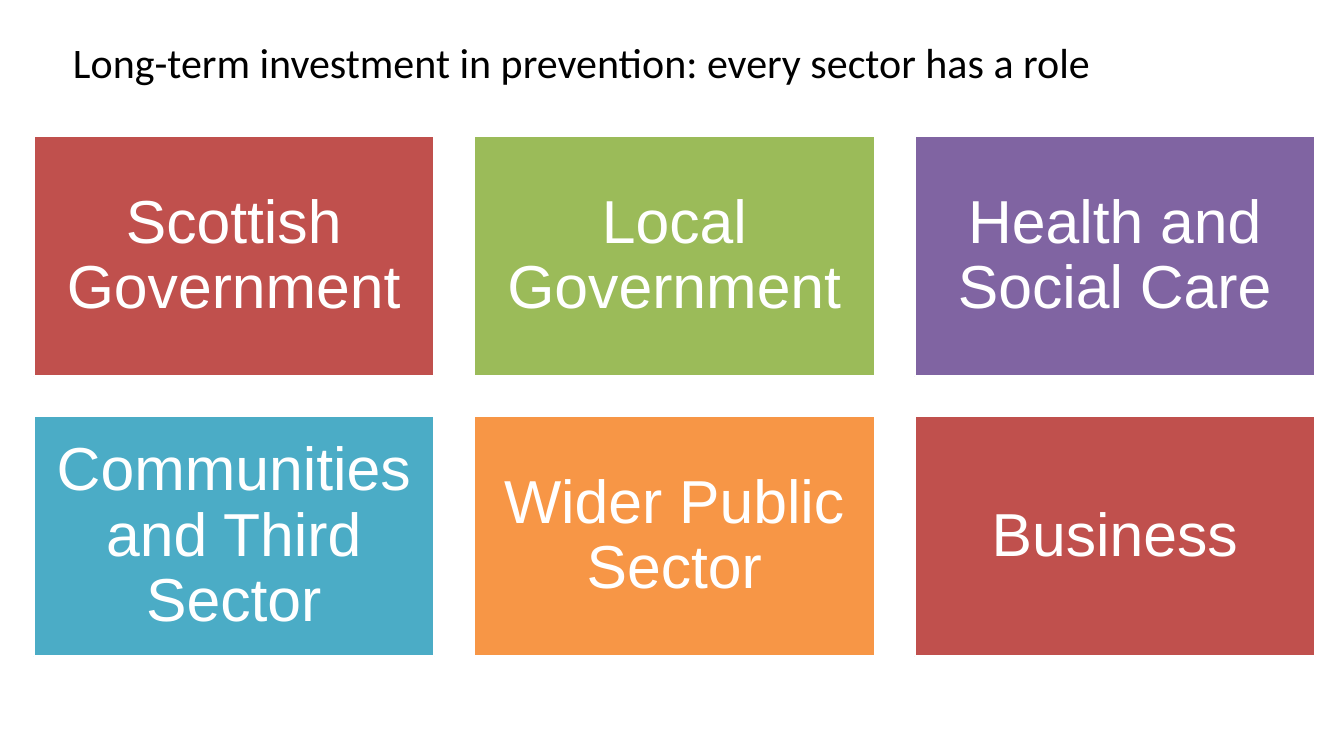
from pptx import Presentation
from pptx.dml.color import RGBColor
from pptx.enum.shapes import MSO_SHAPE
from pptx.enum.text import MSO_ANCHOR, PP_ALIGN
from pptx.util import Cm, Pt

RECTANGLE = MSO_SHAPE.RECTANGLE
MIDDLE = MSO_ANCHOR.MIDDLE
CENTER = PP_ALIGN.CENTER

TITLE = " Long-term investment in prevention: every sector has a role"
SECTORS = [
    ("Scottish Government", "C0504D"),
    ("Local Government", "9BBB59"),
    ("Health and Social Care", "8064A2"),
    ("Communities and Third Sector", "4BACC6"),
    ("Wider Public Sector", "F79646"),
    ("Business", "C0504D"),
]
COLUMNS = 3
LEFT, TOP = 1.27, 5.16
CARD_W, CARD_H = 15.14, 9.07
GAP = 1.51
INSET = 0.69


def rgb(value):
    return RGBColor.from_string(value)


def add_run(p, text, size, font, color):
    r = p.add_run()
    r.text = text
    r.font.size = Pt(size)
    r.font.name = font
    r.font.color.rgb = rgb(color)


def set_title(s, text):
    sp = s.shapes.title
    sp.left, sp.top, sp.width, sp.height = Cm(1.27), Cm(0.76), Cm(41.07), Cm(3.18)
    tf = sp.text_frame
    tf.vertical_anchor = MIDDLE
    p = tf.paragraphs[0]
    p.alignment = CENTER
    add_run(p, text, 45, "Calibri", "000000")


def add_card(s, left, top, text, color):
    sp = s.shapes.add_shape(RECTANGLE, Cm(left), Cm(top), Cm(CARD_W), Cm(CARD_H))
    sp.shadow.inherit = False
    sp.fill.solid()
    sp.fill.fore_color.rgb = rgb(color)
    sp.line.color.rgb = rgb("FFFFFF")
    sp.line.width = Pt(2)
    tf = sp.text_frame
    tf.word_wrap = True
    tf.vertical_anchor = MIDDLE
    tf.margin_left = tf.margin_right = tf.margin_top = tf.margin_bottom = Cm(INSET)
    p = tf.paragraphs[0]
    p.alignment = CENTER
    p.line_spacing = 0.9
    add_run(p, text, 65, "Arial", "FFFFFF")


def main():
    prs = Presentation()
    prs.slide_width, prs.slide_height = Cm(50.8), Cm(28.575)
    s = prs.slides.add_slide(prs.slide_layouts[5])
    set_title(s, TITLE)
    for i, (text, color) in enumerate(SECTORS):
        row, col = divmod(i, COLUMNS)
        add_card(s, LEFT + col * (CARD_W + GAP), TOP + row * (CARD_H + GAP), text, color)
    prs.save("out.pptx")


if __name__ == "__main__":
    main()
